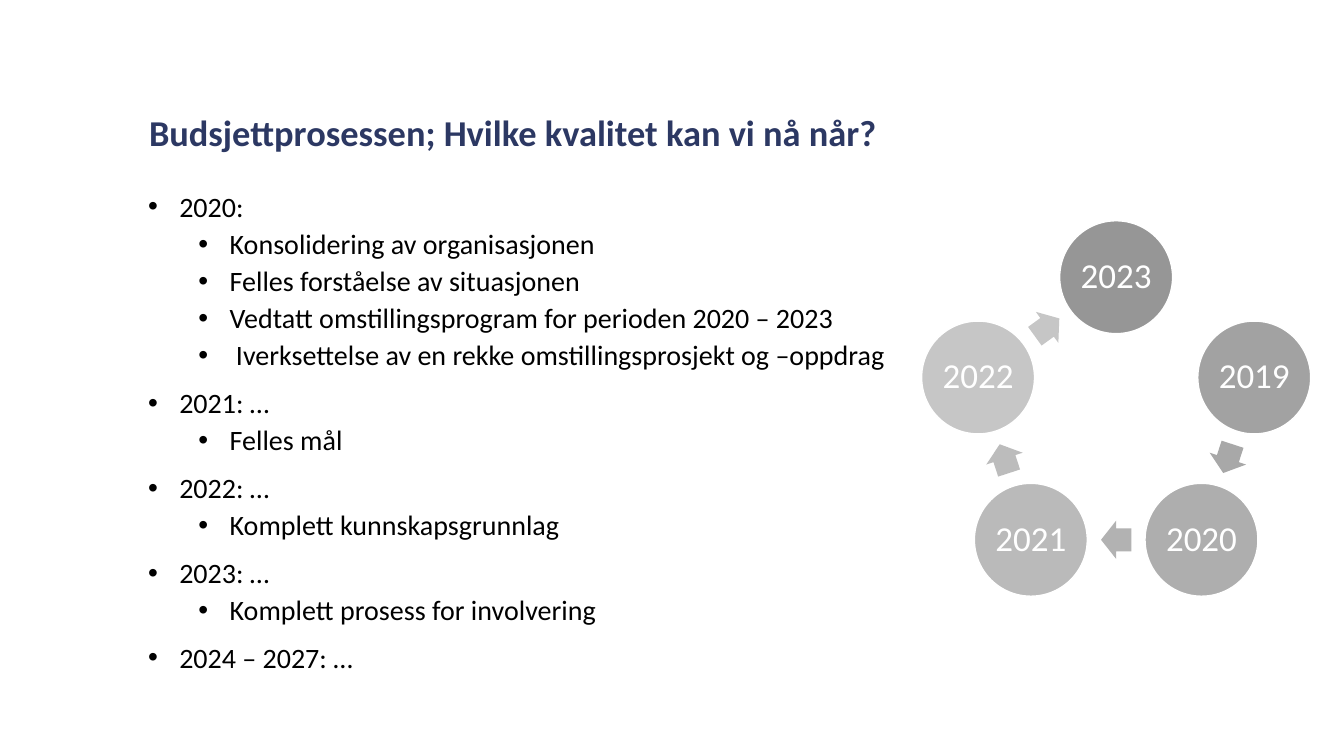
import math

from lxml import etree
from pptx import Presentation
from pptx.dml.color import RGBColor
from pptx.enum import shapes, text
from pptx.oxml.ns import qn
from pptx.util import Inches, Pt

TITLE = "Budsjettprosessen; Hvilke kvalitet kan vi nå når?"
PLAN = [
    ("2020:", [
        "Konsolidering av organisasjonen",
        "Felles forståelse av situasjonen",
        "Vedtatt omstillingsprogram for perioden 2020 – 2023",
        " Iverksettelse av en rekke omstillingsprosjekt og –oppdrag",
    ]),
    ("2021: …", ["Felles mål"]),
    ("2022: …", ["Komplett kunnskapsgrunnlag"]),
    ("2023: …", ["Komplett prosess for involvering"]),
    ("2024 – 2027: …", []),
]
# Clockwise from the top: year, circle colour, colour of the arrow to the next year
CYCLE = [
    ("2023", "969696", None),
    ("2019", "A2A2A2", "A8A8A8"),
    ("2020", "AEAEAE", "B2B2B2"),
    ("2021", "BABABA", "BCBCBC"),
    ("2022", "C6C6C6", "C6C6C6"),
]
CENTRE_X, CENTRE_Y, RADIUS = 11.07, 4.19, 1.44
CIRCLE_SIZE = 1.12


def colour(hex_string):
    return RGBColor.from_string(hex_string)


class SlideBuilder:
    font_name = "Calibri"

    def __init__(self, slide):
        self.slide = slide

    def style(self, para, size, hex_string, bold=False):
        para.font.name = self.font_name
        para.font.size = Pt(size)
        para.font.bold = bold
        para.font.color.rgb = colour(hex_string)

    def text_frame(self, left, top, width, height):
        box = self.slide.shapes.add_textbox(
            Inches(left), Inches(top), Inches(width), Inches(height))
        box.text_frame.word_wrap = True
        return box.text_frame

    def title(self, words):
        frame = self.text_frame(1.38, 0.72, 10.83, 0.86)
        frame.vertical_anchor = text.MSO_ANCHOR.BOTTOM
        para = frame.paragraphs[0]
        para.text = words
        para.line_spacing = 0.9
        self.style(para, 26, "2C3863", bold=True)

    def bullet(self, para, words, level):
        para.text = words
        para.level = level
        properties = para._p.get_or_add_pPr()
        properties.set("marL", str(Inches(0.31 + 0.5 * level)))
        properties.set("indent", str(Inches(-0.31)))
        etree.SubElement(properties, qn("a:buFont"), typeface="Arial")
        etree.SubElement(properties, qn("a:buChar"), char="•")
        if level:
            para.line_spacing = 0.9
        self.style(para, 20, "000000")

    def plan(self, groups):
        frame = self.text_frame(1.37, 1.83, 10.83, 3.82)
        lines = [(words, level) for year, goals in groups
                 for words, level in [(year, 0)] + [(goal, 1) for goal in goals]]
        for index, (words, level) in enumerate(lines):
            para = frame.add_paragraph() if index else frame.paragraphs[0]
            self.bullet(para, words, level)
            if index:
                para.space_before = Pt(5 if level else 10)

    def shape(self, kind, centre, width, height, fill):
        """Add a filled shape without outline, placed by its centre."""
        x, y = centre
        shape = self.slide.shapes.add_shape(
            kind, Inches(x - width / 2), Inches(y - height / 2),
            Inches(width), Inches(height))
        shape.shadow.inherit = False
        shape.fill.solid()
        shape.fill.fore_color.rgb = colour(fill)
        shape.line.fill.background()
        return shape

    def year_circle(self, centre, year, fill):
        circle = self.shape(shapes.MSO_SHAPE.OVAL, centre, CIRCLE_SIZE, CIRCLE_SIZE, fill)
        circle.line.color.rgb = colour("FFFFFF")
        circle.line.width = Pt(1)
        frame = circle.text_frame
        frame.margin_left = frame.margin_right = Inches(0.03)
        frame.margin_top = frame.margin_bottom = Inches(0.03)
        frame.vertical_anchor = text.MSO_ANCHOR.MIDDLE
        para = frame.paragraphs[0]
        para.text = year
        para.alignment = text.PP_ALIGN.CENTER
        para.line_spacing = 0.9
        self.style(para, 25, "FFFFFF")

    def arrow(self, centre, rotation, fill):
        arrow = self.shape(shapes.MSO_SHAPE.RIGHT_ARROW, centre, 0.3, 0.38, fill)
        arrow.adjustments[0] = 0.6
        arrow.adjustments[1] = 0.5
        arrow.rotation = rotation

    def cycle(self, years):
        step = 360 / len(years)
        arrow_radius = RADIUS * math.cos(math.radians(step / 2))
        for index, (year, fill, arrow_fill) in enumerate(years):
            angle = index * step
            self.year_circle(on_ring(angle, RADIUS), year, fill)
            if arrow_fill:
                halfway = angle + step / 2
                self.arrow(on_ring(halfway, arrow_radius), halfway, arrow_fill)


def on_ring(angle, radius):
    """Return the point at a clockwise angle from the top of the cycle."""
    turn = math.radians(angle)
    return CENTRE_X + radius * math.sin(turn), CENTRE_Y - radius * math.cos(turn)


def main():
    deck = Presentation()
    deck.slide_width, deck.slide_height = Inches(13.33), Inches(7.5)
    builder = SlideBuilder(deck.slides.add_slide(deck.slide_layouts[6]))
    builder.plan(PLAN)
    builder.title(TITLE)
    builder.cycle(CYCLE)
    deck.save("out.pptx")


if __name__ == "__main__":
    main()
